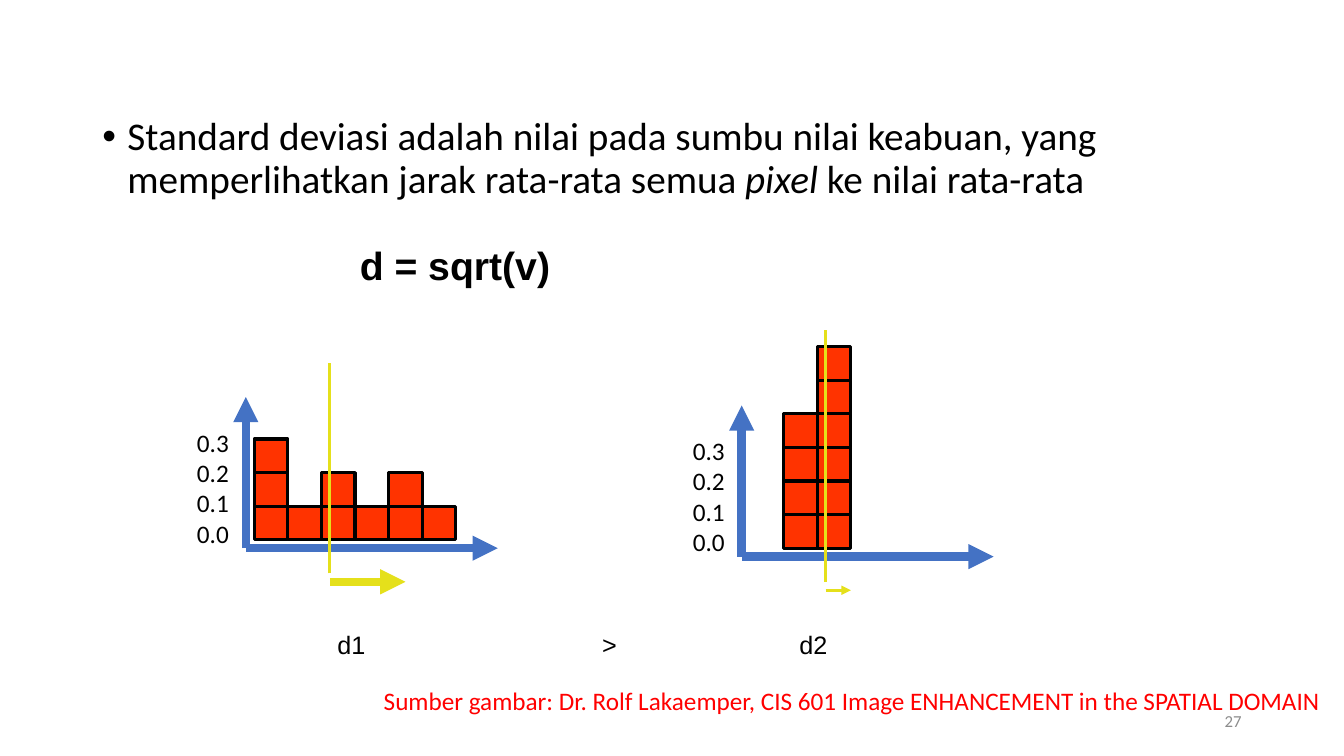
from lxml import etree
from pptx import Presentation
from pptx.dml.color import RGBColor
from pptx.enum import shapes, text
from pptx.oxml.ns import qn
from pptx.util import Pt

COLORS = {"black": "000000", "bar": "FF3300", "axis": "4472C4",
          "mean": "E5E01B", "credit": "FF0000", "number": "8C8C8C"}
CELL = 24


class SlideBuilder:
    def __init__(self, slide):
        self.slide = slide

    def color(self, name):
        return RGBColor.from_string(COLORS[name])

    def text(self, x, y, w, h, lines, size=18, font="Calibri", color="black",
             bold=False, align=text.PP_ALIGN.LEFT, wrap=True,
             anchor=text.MSO_ANCHOR.TOP, tabs=()):
        """Add a text box; each line is a list of (words, italic) runs or a string."""
        sp = self.slide.shapes.add_textbox(Pt(x), Pt(y), Pt(w), Pt(h))
        tf = sp.text_frame
        tf.word_wrap = wrap
        tf.vertical_anchor = anchor
        for i, line in enumerate(lines):
            p = tf.paragraphs[0] if i == 0 else tf.add_paragraph()
            p.alignment = align
            if tabs:
                tab_list = etree.SubElement(p._p.get_or_add_pPr(), qn("a:tabLst"))
                for pos in tabs:
                    etree.SubElement(tab_list, qn("a:tab"), pos=str(Pt(pos)), algn="l")
            for words, italic in [(line, False)] if isinstance(line, str) else line:
                r = p.add_run()
                r.text = words
                r.font.name, r.font.size = font, Pt(size)
                r.font.bold, r.font.italic = bold, italic
                r.font.color.rgb = self.color(color)
        return sp

    def bullet(self, p, indent):
        pPr = p._p.get_or_add_pPr()
        pPr.set("marL", str(Pt(indent)))
        pPr.set("indent", str(-Pt(indent)))
        etree.SubElement(pPr, qn("a:buFont"), typeface="Arial")
        etree.SubElement(pPr, qn("a:buChar"), char="•")

    def cell(self, x, y):
        sp = self.slide.shapes.add_shape(
            shapes.MSO_SHAPE.RECTANGLE, Pt(x), Pt(y), Pt(CELL), Pt(CELL))
        sp.shadow.inherit = False
        sp.fill.solid()
        sp.fill.fore_color.rgb = self.color("bar")
        sp.line.color.rgb = self.color("black")
        sp.line.width = Pt(2.25)

    def line(self, x1, y1, x2, y2, color, width, arrow=True):
        cxn = self.slide.shapes.add_connector(
            shapes.MSO_CONNECTOR.STRAIGHT, Pt(x1), Pt(y1), Pt(x2), Pt(y2))
        cxn.line.color.rgb = self.color(color)
        cxn.line.width = Pt(width)
        if arrow:
            etree.SubElement(cxn.line._get_or_add_ln(), qn("a:tailEnd"), type="triangle")
        etree.SubElement(cxn._element.spPr, qn("a:effectLst"))

    def histogram(self, x, y, first, counts, mean_height, deviation, arrow_width):
        """Draw a histogram whose axes meet at (x, y)."""
        for col, count in enumerate(counts):
            for row in range(count):
                self.cell(x + first + col * CELL, y - 6 - (row + 1) * CELL)
        self.line(x, y, x, y - 108, "axis", 6)
        self.line(x, y, x + 180, y, "axis", 6)
        self.text(x - 42, y - 90, 37.5, 94, ["0.3", "0.2", "0.1", "0.0"], wrap=False)
        # Mean line and standard deviation arrow
        mean = x + 60
        self.line(mean, y + 18, mean, y - mean_height, "mean", 2.25, arrow=False)
        self.line(mean, y + 24, mean + deviation, y + 24, "mean", arrow_width)


def main():
    prs = Presentation()
    prs.slide_width, prs.slide_height = Pt(960), Pt(540)
    s = SlideBuilder(prs.slides.add_slide(prs.slide_layouts[6]))

    # Definition and formula
    body = s.text(66, 80, 828, 407, [[
        ("Standard deviasi adalah nilai pada sumbu nilai keabuan, yang "
         "memperlihatkan jarak rata-rata semua ", False),
        ("pixel ", True), ("ke nilai rata-rata", False)]], size=28)
    p = body.text_frame.paragraphs[0]
    p.line_spacing = 0.9
    s.bullet(p, 18)
    s.text(249, 169, 152, 41, ["d = sqrt(v)"], size=28, font="Arial", bold=True,
           align=text.PP_ALIGN.CENTER, wrap=False)

    # Wide and narrow distributions
    s.histogram(175.6, 391.6, 6, [3, 1, 2, 1, 2, 1], 132, 54, 6)
    s.histogram(529.8, 397.6, 30, [4, 6], 162, 18, 2.25)

    # Comparison of the deviations
    s.text(234, 446, 369, 29, ["d1\t>\td2"], font="Arial", wrap=False, tabs=(189, 330))

    # Credit and slide number
    s.text(267, 486, 685, 51, ["Sumber gambar: Dr. Rolf Lakaemper, CIS 601 Image "
                               "ENHANCEMENT in the SPATIAL DOMAIN"], color="credit")
    s.text(678, 500.5, 216, 29, ["27"], size=12, color="number",
           align=text.PP_ALIGN.RIGHT, anchor=text.MSO_ANCHOR.MIDDLE)

    prs.save("out.pptx")


if __name__ == "__main__":
    main()
